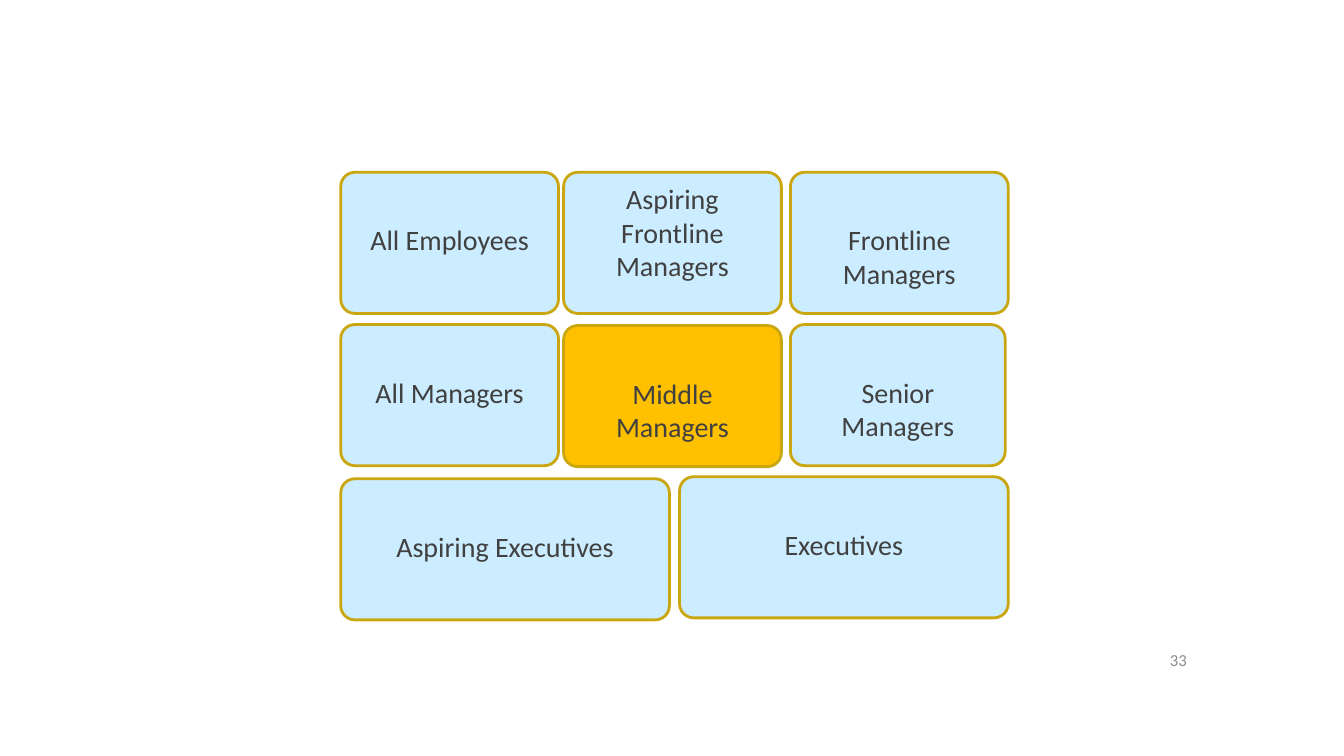
from dataclasses import dataclass

from pptx import Presentation
from pptx.dml.color import RGBColor
from pptx.enum.shapes import MSO_SHAPE as Shape
from pptx.enum.text import MSO_ANCHOR as Anchor, PP_ALIGN as Align
from pptx.util import Inches, Pt

COLORS = {"sky": "CCECFF", "amber": "FFC000", "edge": "CAA710",
          "text": "404040", "number": "8C8C8C"}
COLUMNS = (3.38, 5.59, 6.74, 7.84)
FIRST_ROW, ROW_PITCH, TILE_HEIGHT = 1.71, 1.51, 1.4
NARROW, WIDE = 2.16, 3.26
LOWERED, RAISED = 0.46, 0.05


@dataclass(frozen=True)
class Tile:
    text: str
    col: int
    row: int
    width: float = NARROW
    fill: str = "sky"
    inset: float = LOWERED
    drop: float = 0


TILES = (
    Tile("All Employees", 0, 0),
    Tile("Aspiring Frontline Managers", 1, 0, inset=RAISED),
    Tile("Frontline Managers", 3, 0),
    Tile("All Managers", 0, 1),
    Tile("Middle Managers", 1, 1, fill="amber", drop=0.01),
    Tile("Senior Managers", 3, 1, width=2.13),
    Tile("Aspiring Executives", 0, 2, width=WIDE, drop=0.02),
    Tile("Executives", 2, 2, width=WIDE),
)


def rgb(name: str) -> RGBColor:
    return RGBColor.from_string(COLORS[name])


def write(tf, text: str, size: int, color: str, align: Align, frame: dict) -> None:
    for key, value in {"word_wrap": True, **frame}.items():
        setattr(tf, key, value)
    p = tf.paragraphs[0]
    p.alignment = align
    r = p.add_run()
    r.text = text
    for key, value in {"name": "Calibri", "size": Pt(size)}.items():
        setattr(r.font, key, value)
    r.font.color.rgb = rgb(color)


def add_tile(s, tile: Tile) -> None:
    top = FIRST_ROW + tile.row * ROW_PITCH + tile.drop
    box = (COLUMNS[tile.col], top, tile.width, TILE_HEIGHT)
    sp = s.shapes.add_shape(Shape.ROUNDED_RECTANGLE, *map(Inches, box))
    sp.adjustments[0] = 0.1
    sp.shadow.inherit = False
    sp.fill.solid()
    sp.fill.fore_color.rgb = rgb(tile.fill)
    sp.line.color.rgb = rgb("edge")
    sp.line.width = Pt(2)
    write(sp.text_frame, tile.text, 20, "text", Align.CENTER,
          {"vertical_anchor": Anchor.TOP, "margin_top": Inches(tile.inset)})


def add_number(s, number: str) -> None:
    sp = s.shapes.add_textbox(*map(Inches, (9.42, 6.35, 2.45, 0.4)))
    write(sp.text_frame, number, 12, "number", Align.RIGHT,
          {"vertical_anchor": Anchor.MIDDLE})


def main() -> None:
    prs = Presentation()
    prs.slide_width, prs.slide_height = Inches(13.33), Inches(7.5)
    s = prs.slides.add_slide(prs.slide_layouts[6])
    for tile in TILES:
        add_tile(s, tile)
    add_number(s, "33")
    prs.save("out.pptx")


if __name__ == "__main__":
    main()
